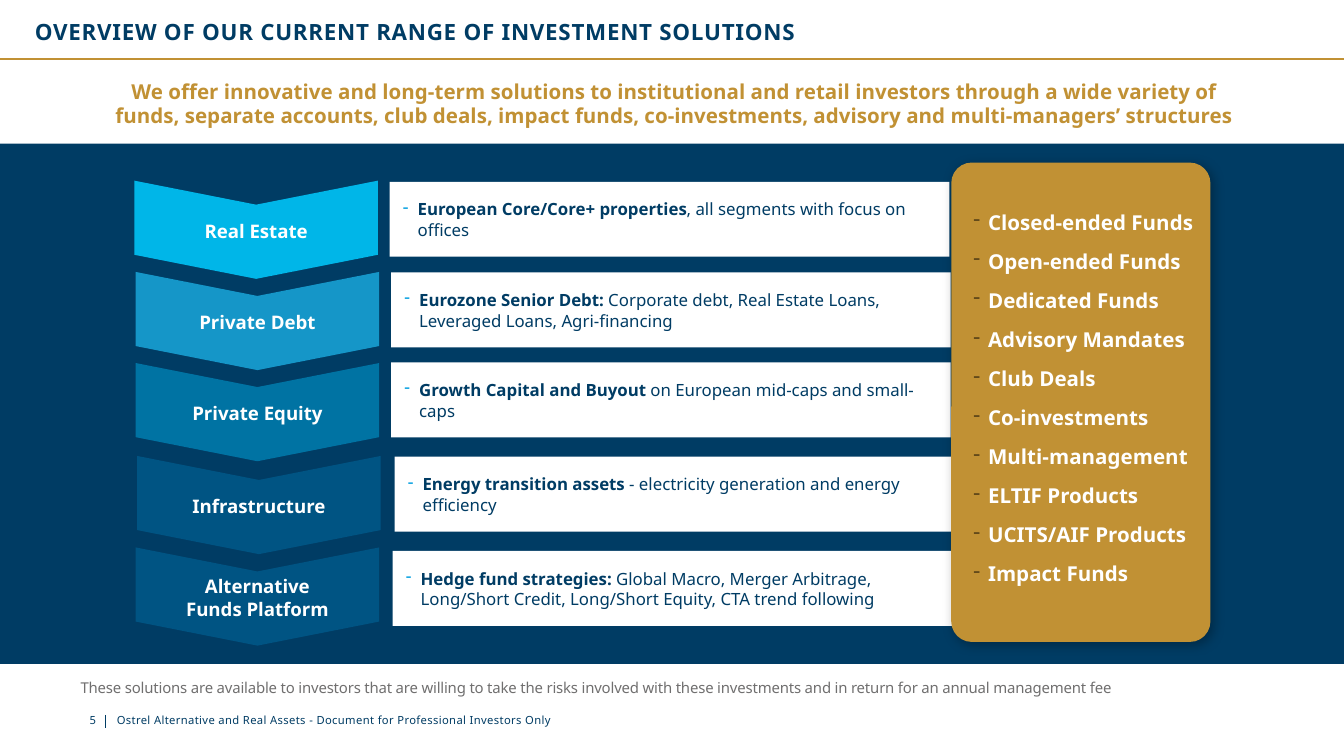
from dataclasses import dataclass

from lxml import etree
from pptx import Presentation
from pptx.dml.color import RGBColor
from pptx.enum import shapes, text
from pptx.oxml import ns
from pptx.util import Pt


@dataclass(frozen=True)
class Theme:
    font: str = "Noto Sans"
    navy: str = "003C64"
    gold: str = "C19134"
    white: str = "FFFFFF"
    grey: str = "706F6F"
    dash: str = "009EE0"
    brown: str = "61481A"
    sky: str = "00B6E8"
    blue: str = "1596C8"
    teal: str = "0073A3"
    deep: str = "005483"
    title: int = 12
    lead: int = 11
    label: int = 10
    body: int = 9
    note: int = 8
    foot: int = 6


T = Theme()
KIND = shapes.MSO_SHAPE
MID = text.MSO_ANCHOR.MIDDLE
TOP = text.MSO_ANCHOR.TOP
CENTER = text.PP_ALIGN.CENTER
LEFT = text.PP_ALIGN.LEFT

# label, colour, chevron centre (x, y), card corner (x, y), bold text, plain text
ROWS = [
    (["Real Estate"], T.sky, (137.2, 123.1), (208.8, 97.4),
     "European Core/Core+ properties", ", all segments with focus on offices"),
    (["Private Debt"], T.blue, (137.9, 172), (209.6, 146),
     "Eurozone Senior Debt:",
     " Corporate debt, Real Estate Loans, Leveraged Loans, Agri-financing"),
    (["Private Equity"], T.teal, (137.9, 220.8), (209.6, 194.2),
     "Growth Capital and Buyout ", "on European mid-caps and small-caps"),
    (["Infrastructure"], T.deep, (138.7, 270.6), (211.4, 244.7),
     "Energy transition assets ",
     "- electricity generation and energy efficiency"),
    (["Alternative", "Funds Platform"], T.deep, (137.9, 319.6), (210.4, 295.2),
     "Hedge fund strategies:",
     " Global Macro, Merger Arbitrage, Long/Short Credit, Long/Short Equity, "
     "CTA trend following"),
]
FUNDS = ["Closed-ended Funds", "Open-ended Funds", "Dedicated Funds",
         "Advisory Mandates", "Club Deals", "Co-investments",
         "Multi-management", "ELTIF Products", "UCITS/AIF Products",
         "Impact Funds"]


def rgb(code):
    return RGBColor.from_string(code)


def node(parent, tag, **attrs):
    return etree.SubElement(parent, ns.qn(tag), **attrs)


def dash(para, color):
    """Give a paragraph a hanging dash bullet."""
    props = para._p.get_or_add_pPr()
    props.set("marL", str(Pt(7.9)))
    props.set("indent", str(-Pt(7.9)))
    node(node(props, "a:buClr"), "a:srgbClr", val=color)
    node(props, "a:buChar", char="-")


def write(shape, paras, *, size, color, bold=False, align=LEFT, anchor=TOP,
          inset=(0, 0, 0, 0), lead=None, gap=0, bullet=None, track=0):
    """Fill a shape with paragraphs, each a list of (words, bold) or a string."""
    frame = shape.text_frame
    frame.word_wrap = True
    frame.vertical_anchor = anchor
    (frame.margin_left, frame.margin_top,
     frame.margin_right, frame.margin_bottom) = map(Pt, inset)
    for i, parts in enumerate(paras):
        para = frame.paragraphs[0] if i == 0 else frame.add_paragraph()
        if bullet:
            dash(para, bullet)
        para.alignment = align
        if lead:
            para.line_spacing = lead
        if i and gap:
            para.space_before = Pt(gap)
        if isinstance(parts, str):
            parts = [(parts, bold)]
        for words, heavy in parts:
            run = para.add_run()
            run.text = words
            font = run.font
            font.name, font.size, font.bold = T.font, Pt(size), heavy
            font.color.rgb = rgb(color)
            if track:
                run._r.get_or_add_rPr().set("spc", str(round(track * 100)))


def label(slide, box, paras, **form):
    write(slide.shapes.add_textbox(*map(Pt, box)), paras, **form)


def block(slide, kind, box, color):
    shape = slide.shapes.add_shape(kind, *map(Pt, box))
    shape.shadow.inherit = False
    shape.fill.solid()
    shape.fill.fore_color.rgb = rgb(color)
    shape.line.fill.background()
    return shape


def rule(slide, start, end, color, width):
    line = slide.shapes.add_connector(
        shapes.MSO_CONNECTOR.STRAIGHT, *map(Pt, start + end))
    line.line.color.rgb = rgb(color)
    line.line.width = Pt(width)
    node(line._element.spPr, "a:effectLst")


def shade(shape):
    """Cast a soft shadow to the lower right."""
    effects = shape._element.spPr.find(ns.qn("a:effectLst"))
    cast = node(effects, "a:outerShdw", blurRad=str(Pt(6)), dist=str(Pt(2)),
                dir=str(45 * 60000), algn="tl", rotWithShape="0")
    node(node(cast, "a:srgbClr", val="000000"), "a:alpha", val="30000")


def row(slide, names, color, center, corner, strong, plain):
    x, y = center
    wide, high = 130.5, 52.6
    card = block(slide, KIND.RECTANGLE, (*corner, 299.8, 40.2), T.white)
    write(card, [[(strong, True), (plain, False)]], size=T.body, color=T.navy,
          anchor=MID, inset=(7.2, 0, 7.2, 0), lead=Pt(11), bullet=T.dash)
    arrow = block(slide, KIND.CHEVRON,
                  (x - high / 2, y - wide / 2, high, wide), color)
    arrow.adjustments[0] = 0.245
    arrow.rotation = 90
    tall = 12 * len(names)
    label(slide, (x - wide / 2, y + 0.6 - tall / 2, wide, tall), names,
          size=T.label, color=T.white, bold=True, align=CENTER, anchor=MID,
          lead=Pt(12))


def panel(slide):
    shape = block(slide, KIND.ROUNDED_RECTANGLE,
                  (509.6, 87.1, 138.8, 256.8), T.gold)
    shape.adjustments[0] = 0.079
    shade(shape)
    write(shape, FUNDS, size=T.lead, color=T.white, bold=True, anchor=MID,
          inset=(8.6, 0, 0, 2.9), lead=0.85, gap=9.7, bullet=T.brown)


def main():
    deck = Presentation()
    deck.slide_width, deck.slide_height = Pt(720), Pt(405)
    slide = deck.slides.add_slide(deck.slide_layouts[6])

    rule(slide, (56.7, 383), (56.7, 389.8), T.navy, 0.5)
    rule(slide, (0, 31.5), (720, 31.5), T.gold, 1)
    block(slide, KIND.RECTANGLE, (0, 77, 720, 278.7), T.navy)
    label(slide, (18.7, 1.4, 679.7, 32.4),
          ["OVERVIEW OF OUR CURRENT RANGE OF INVESTMENT SOLUTIONS"],
          size=T.title, color=T.navy, bold=True, anchor=MID, lead=0.9,
          track=0.4)
    label(slide, (62.6, 382.3, 410.4, 10.8),
          ["Ostrel Alternative and Real Assets - Document for Professional "
           "Investors Only"], size=T.foot, color=T.navy, track=0.2)
    label(slide, (42.5, 382.3, 14.4, 10.8), ["5"], size=T.foot, color=T.navy,
          align=CENTER)
    label(slide, (48.2, 39, 626.4, 33.8),
          ["We offer innovative and long-term solutions to institutional and "
           "retail investors through a wide variety of funds, separate "
           "accounts, club deals, impact funds, co-investments, advisory and "
           "multi-managers’ structures"],
          size=T.lead, color=T.gold, bold=True, align=CENTER,
          inset=(7.2, 3.6, 7.2, 3.6), lead=Pt(13))
    label(slide, (43.2, 363.6, 571.7, 10.8),
          ["These solutions are available to investors that are willing to "
           "take the risks involved with these investments and in return for "
           "an annual management fee"], size=T.note, color=T.grey, track=-0.1)
    for item in ROWS:
        row(slide, *item)
    panel(slide)
    deck.save("out.pptx")


if __name__ == "__main__":
    main()
